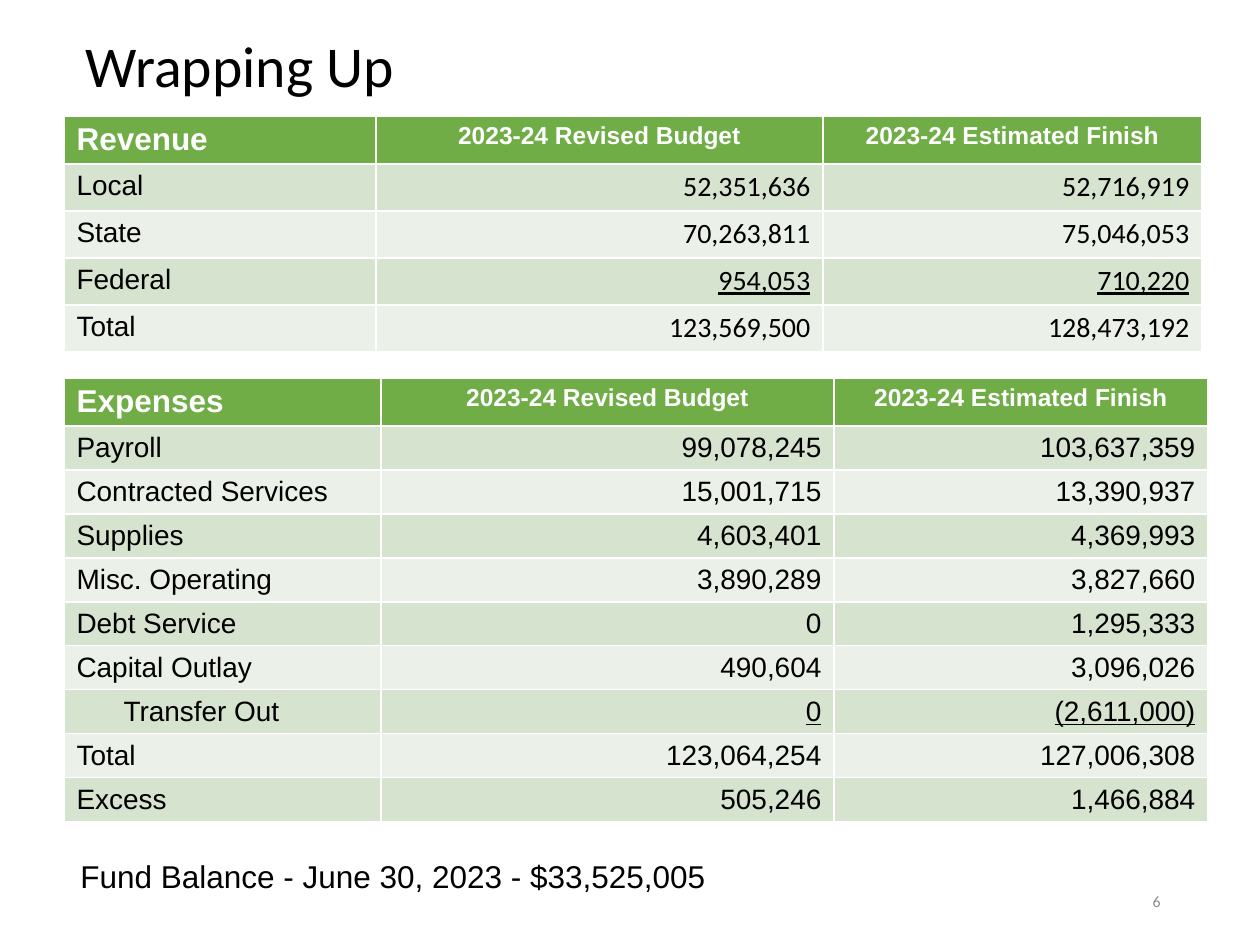
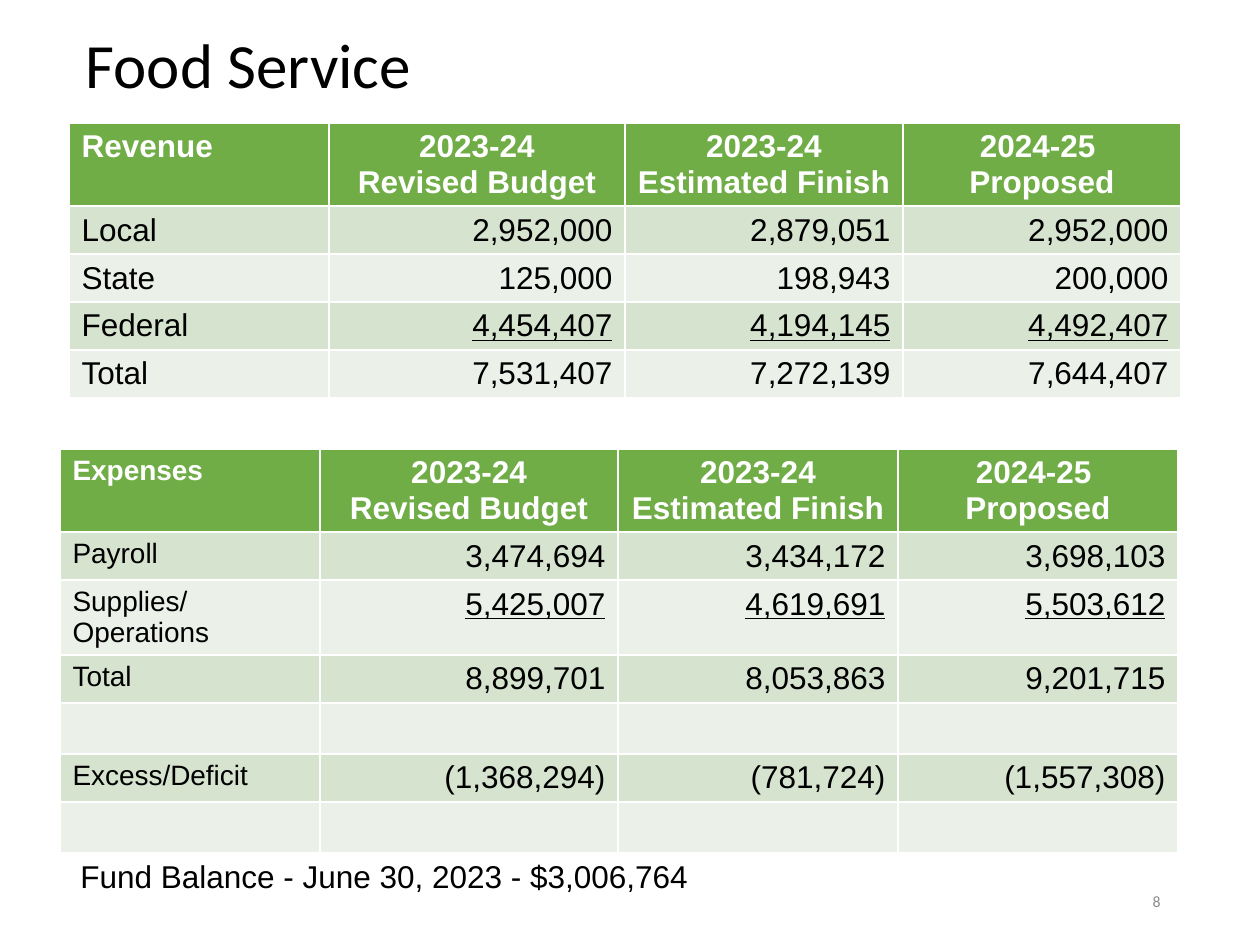
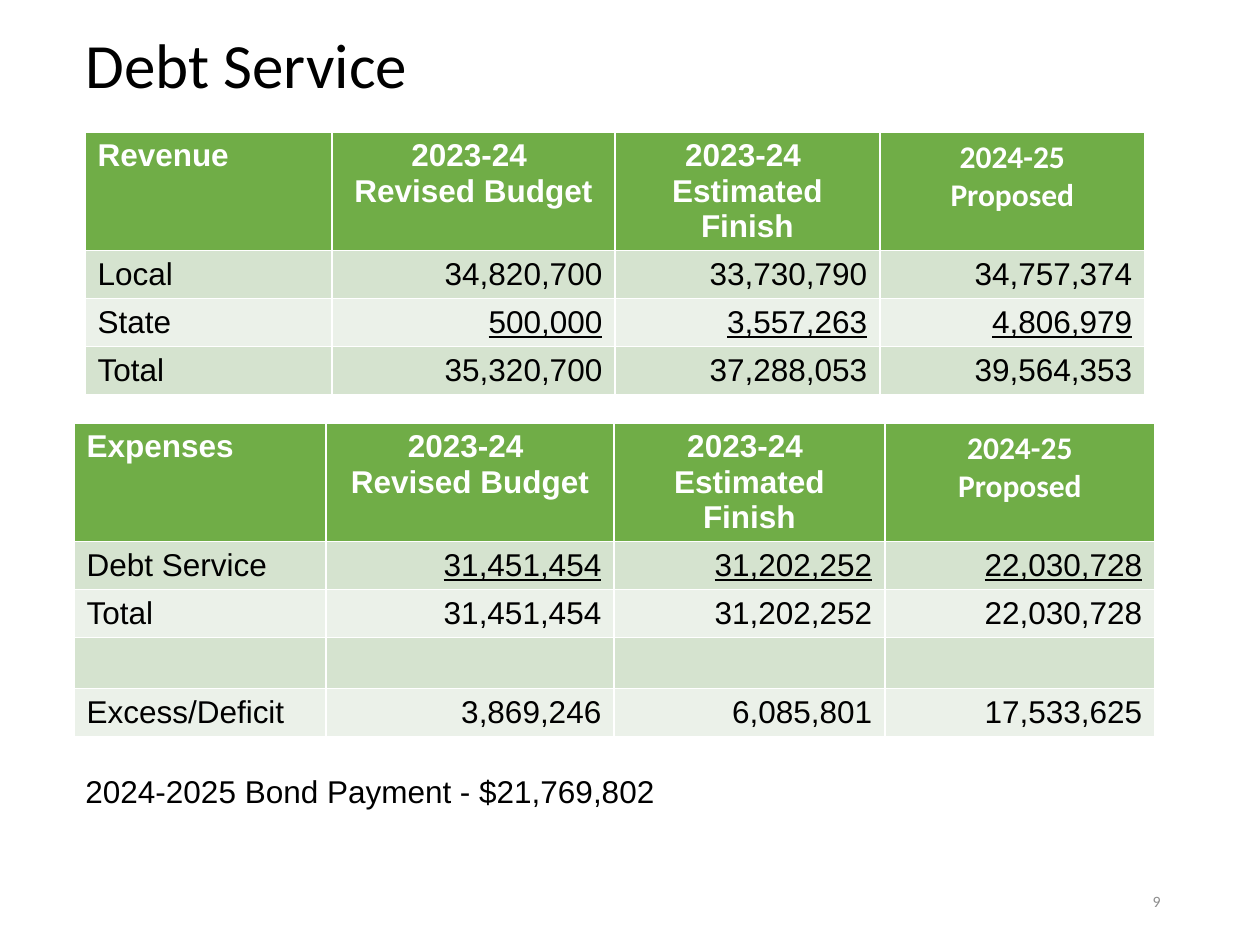
from pptx import Presentation
from pptx.dml.color import RGBColor
from pptx.enum.text import MSO_ANCHOR as ANCHOR, MSO_AUTO_SIZE as AUTOSIZE, PP_ALIGN as ALIGN
from pptx.util import Emu, Pt

PX = 914400 // 126
COLORS = {"head": "70AD47", "odd": "D5E3CF", "even": "EBF1E9",
          "white": "FFFFFF", "black": "000000", "gray": "8C8C8C"}

BUDGET_HEADS = ["2023-24 Revised Budget", "2023-24 Estimated Finish"]
FOOD_HEADS = ["2023-24\nRevised Budget", "2023-24\nEstimated Finish", "2024-25 \nProposed"]
DEBT_HEADS = ["2023-24 \nRevised Budget", "2023-24 \nEstimated Finish", "2024-25\nProposed"]

# sizes: corner heading, other headings, row labels, values
SLIDES = [
    {"title": "Wrapping Up", "title_size": 33, "title_box": (73, 21, 1128, 95), "number": "6",
     "note": "Fund Balance - June 30, 2023 - $33,525,005", "note_box": (68, 851, 1076, 50),
     "tables": [
         {"at": (64, 116), "cols": [312, 447, 379], "heights": [47] * 5,
          "sizes": (18, 14, 16, 16), "value_font": "Calibri",
          "rows": [["Revenue", *BUDGET_HEADS],
                   ["Local", "52,351,636", "52,716,919"],
                   ["State", "70,263,811", "75,046,053"],
                   ["Federal", "954,053", "710,220"],
                   ["Total", "123,569,500", "128,473,192"]]},
         {"at": (64, 378), "cols": [317, 453, 374], "heights": [48] + [44] * 9,
          "sizes": (18, 14, 16, 16),
          "rows": [["Expenses", *BUDGET_HEADS],
                   ["Payroll", "99,078,245", "103,637,359"],
                   ["Contracted Services", "15,001,715", "13,390,937"],
                   ["Supplies", "4,603,401", "4,369,993"],
                   ["Misc. Operating", "3,890,289", "3,827,660"],
                   ["Debt Service", "0", "1,295,333"],
                   ["Capital Outlay", "490,604", "3,096,026"],
                   ["Transfer Out", "0", "(2,611,000)"],
                   ["Total", "123,064,254", "127,006,308"],
                   ["Excess", "505,246", "1,466,884"]]}]},
    {"title": "Food Service", "title_size": 36, "title_box": (73, 10, 1128, 116), "number": "8",
     "note": "Fund Balance - June 30, 2023 - $3,006,764", "note_box": (68, 851, 1076, 50),
     "tables": [
         {"at": (69, 123), "cols": [260, 296, 278, 278], "heights": [83] + [48] * 4,
          "sizes": (18, 18, 18, 18),
          "rows": [["Revenue", *FOOD_HEADS],
                   ["Local", "2,952,000", "2,879,051", "2,952,000"],
                   ["State", "125,000", "198,943", "200,000"],
                   ["Federal", "4,454,407", "4,194,145", "4,492,407"],
                   ["Total", "7,531,407", "7,272,139", "7,644,407"]]},
         {"at": (60, 449), "cols": [260, 298, 280, 280],
          "heights": [83, 48, 75, 48, 51, 48, 51], "sizes": (16, 18, 16, 18),
          "rows": [["Expenses", *FOOD_HEADS],
                   ["Payroll", "3,474,694", "3,434,172", "3,698,103"],
                   ["Supplies/Operations", "5,425,007", "4,619,691", "5,503,612"],
                   ["Total", "8,899,701", "8,053,863", "9,201,715"],
                   [""] * 4,
                   ["Excess/Deficit", "(1,368,294)", "(781,724)", "(1,557,308)"],
                   [""] * 4]}]},
    {"title": "Debt Service", "title_size": 36, "title_box": (73, 10, 1128, 116), "number": "9",
     "note": "2024-2025 Bond Payment - $21,769,802", "note_box": (73, 766, 1029, 50),
     "tables": [
         {"at": (85, 132), "cols": [247, 283, 265, 265], "heights": [118] + [48] * 3,
          "sizes": (18, 18, 18, 18), "last_head_font": "Calibri",
          "rows": [["Revenue", *DEBT_HEADS],
                   ["Local", "34,820,700", "33,730,790", "34,757,374"],
                   ["State", "500,000", "3,557,263", "4,806,979"],
                   ["Total", "35,320,700", "37,288,053", "39,564,353"]]},
         {"at": (74, 423), "cols": [252, 288, 271, 270], "heights": [118, 48, 48, 51, 48],
          "sizes": (18, 18, 18, 18), "last_head_font": "Calibri",
          "rows": [["Expenses", *DEBT_HEADS],
                   ["Debt Service", "31,451,454", "31,202,252", "22,030,728"],
                   ["Total", "31,451,454", "31,202,252", "22,030,728"],
                   [""] * 4,
                   ["Excess/Deficit", "3,869,246", "6,085,801", "17,533,625"]]}]},
]


def px(*lengths):
    return [Emu(n * PX) for n in lengths]


def write(tf, text, size, color, font="Arial", align=ALIGN.LEFT, bold=False, underline=False):
    """Fill a text frame and give all its paragraphs one format."""
    tf.text = text
    tf.word_wrap = True
    for p in tf.paragraphs:
        p.alignment = align
        p.font.name, p.font.size = font, Pt(size)
        p.font.bold, p.font.underline = bold, underline
        p.font.color.rgb = RGBColor.from_string(COLORS[color])


prs = Presentation()
prs.slide_width, prs.slide_height = px(1260, 945)

for page in SLIDES:
    s = prs.slides.add_slide(prs.slide_layouts[5])
    title = s.shapes.title
    title.left, title.top, title.width, title.height = px(*page["title_box"])
    tf = title.text_frame
    write(tf, page["title"], page["title_size"], "black", "Calibri")
    tf.auto_size, tf.vertical_anchor = AUTOSIZE.NONE, ANCHOR.MIDDLE
    tf.paragraphs[0].line_spacing = 0.9

    for spec in page["tables"]:
        rows, cols, heights = spec["rows"], spec["cols"], spec["heights"]
        corner_size, head_size, label_size, value_size = spec["sizes"]
        box = px(*spec["at"], sum(cols), sum(heights))
        table = s.shapes.add_table(len(rows), len(cols), *box).table
        for column, width in zip(table.columns, px(*cols)):
            column.width = width
        for row, height in zip(table.rows, px(*heights)):
            row.height = height

        subtotal_row = [row[0] for row in rows].index("Total") - 1
        for i, row in enumerate(rows):
            for j, text in enumerate(row):
                cell = table.cell(i, j)
                tf = cell.text_frame
                if i == 0:
                    fill = "head"
                    last = j == len(cols) - 1
                    write(tf, text, head_size if j else corner_size, "white",
                          spec.get("last_head_font", "Arial") if last else "Arial",
                          ALIGN.CENTER if j else ALIGN.LEFT, bold=True)
                else:
                    fill = "odd" if i % 2 else "even"
                    if j == 0:
                        write(tf, text, label_size, "black")
                    else:
                        write(tf, text, value_size, "black", spec.get("value_font", "Arial"),
                              ALIGN.RIGHT, underline=i == subtotal_row)
                if text == "Transfer Out":
                    p = tf.paragraphs[0]
                    p.level = 1
                    p._p.get_or_add_pPr().set("marL", str(47 * PX))
                cell.fill.solid()
                cell.fill.fore_color.rgb = RGBColor.from_string(COLORS[fill])

    number = s.shapes.add_textbox(*px(890, 876, 283, 50)).text_frame
    write(number, page["number"], 9, "gray", "Calibri", ALIGN.RIGHT)
    number.vertical_anchor = ANCHOR.MIDDLE
    note = s.shapes.add_textbox(*px(*page["note_box"])).text_frame
    write(note, page["note"], 18, "black")

prs.save("out.pptx")
